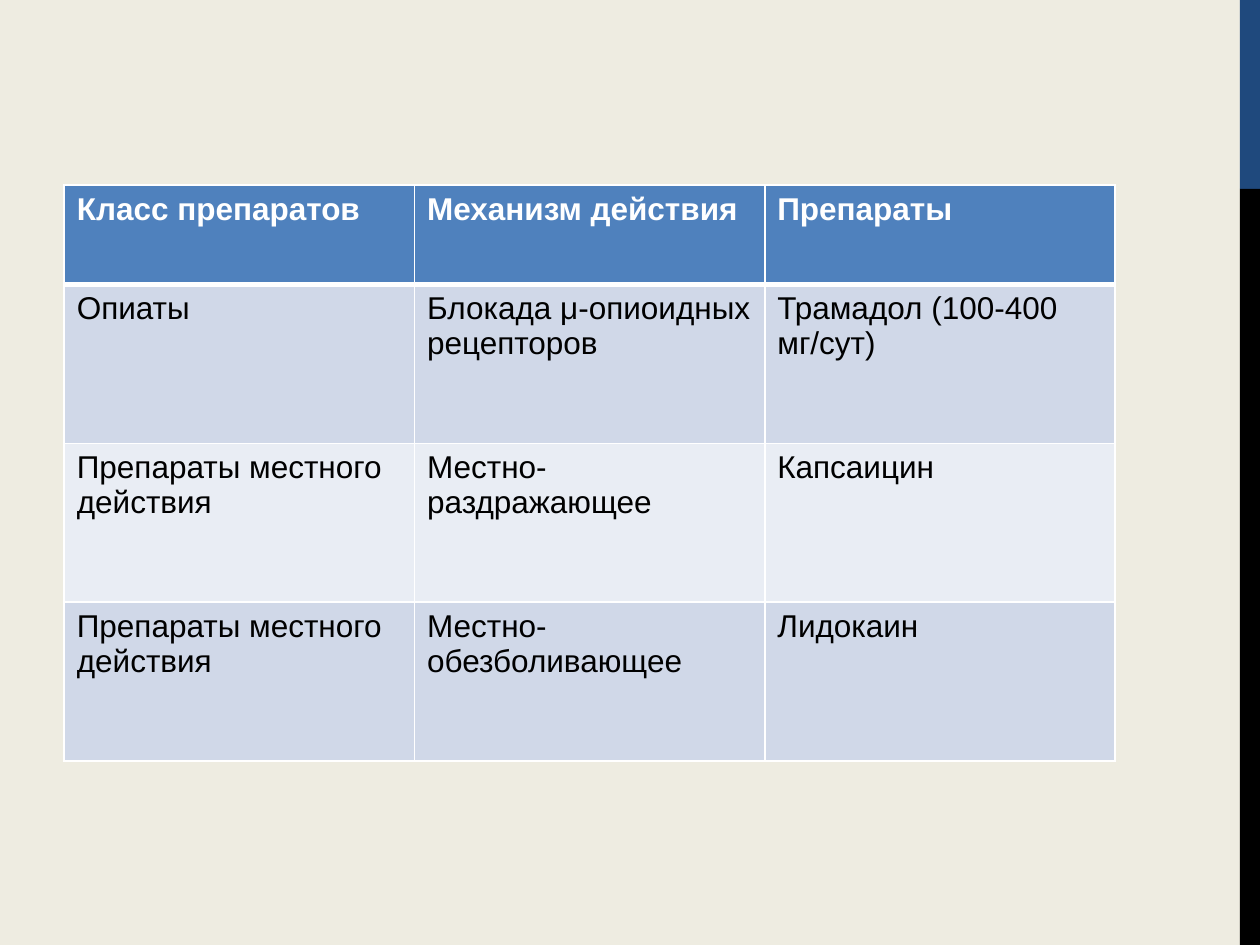
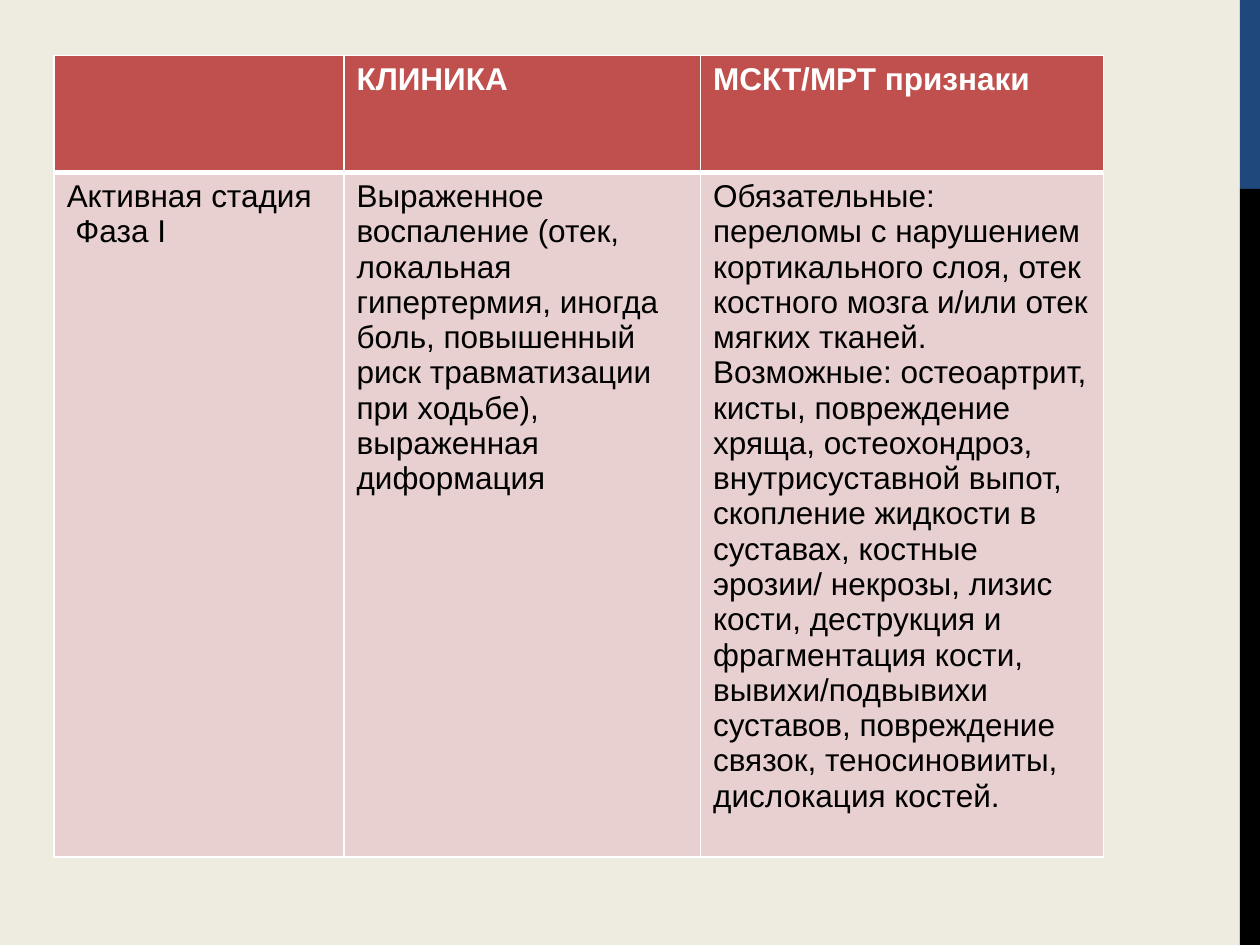
from lxml import etree
from pptx import Presentation
from pptx.dml.color import RGBColor
from pptx.enum.shapes import MSO_SHAPE
from pptx.oxml.ns import qn
from pptx.util import Inches, Pt

RECTANGLE = MSO_SHAPE.RECTANGLE
COLORS = {
    "background": "EEECE1", "navy": "1F497D", "black": "000000", "white": "FFFFFF",
    "blue": "4F81BD", "blue_tint": "D0D8E8", "blue_pale": "E9EDF4",
    "red": "C0504D", "red_tint": "E8D0D0",
}
FONT = "Arial"
WIDTH, HEIGHT = 10, 7.5
BAND_WIDTH = 0.16
BAND_SPLIT = HEIGHT / 5

# Each row is a fill name, a height and its cell texts; "\n" starts a paragraph.
TABLES = [
    {
        "left": 0.51, "top": 1.47, "columns": [2.78] * 3,
        "rows": [
            ("blue", 0.79, ["Класс препаратов", "Механизм действия", "Препараты"]),
            ("blue_tint", 1.26, ["Опиаты", "Блокада μ-опиоидных рецепторов",
                                 "Трамадол (100-400 мг/сут)"]),
            ("blue_pale", 1.26, ["Препараты местного\nдействия", "Местно-раздражающее",
                                 "Капсаицин"]),
            ("blue_tint", 1.26, ["Препараты местного действия", "Местно-обезболивающее",
                                 "Лидокаин"]),
        ],
    },
    {
        "left": 0.43, "top": 0.44, "columns": [2.3, 2.83, 3.2],
        "rows": [
            ("red", 0.93, ["", "КЛИНИКА", "МСКТ/МРТ признаки"]),
            ("red_tint", 5.43, [
                "Активная стадия\n Фаза I",
                "Выраженное воспаление (отек, локальная гипертермия, иногда боль, "
                "повышенный риск травматизации при ходьбе), выраженная диформация",
                "Обязательные: переломы с нарушением кортикального слоя, отек костного "
                "мозга и/или отек мягких тканей. Возможные: остеоартрит, кисты, "
                "повреждение хряща, остеохондроз, внутрисуставной выпот, скопление "
                "жидкости в суставах, костные эрозии/ некрозы, лизис кости, деструкция "
                "и фрагментация кости, вывихи/подвывихи суставов, повреждение связок, "
                "теносиновииты, дислокация костей.",
            ]),
        ],
    },
]


def paint(fill, color):
    fill.solid()
    fill.fore_color.rgb = RGBColor.from_string(COLORS[color])


def add_borders(cell, bottom, top):
    """Draw white cell borders, 1 pt at the sides; they must precede the fill in tcPr."""
    properties = cell._tc.get_or_add_tcPr()
    for index, (side, points) in enumerate((("L", 1), ("R", 1), ("T", top), ("B", bottom))):
        line = etree.Element(qn(f"a:ln{side}"), w=str(Pt(points)))
        solid = etree.SubElement(line, qn("a:solidFill"))
        etree.SubElement(solid, qn("a:srgbClr"), val=COLORS["white"])
        properties.insert(index, line)


presentation = Presentation()
presentation.slide_width = Inches(WIDTH)
presentation.slide_height = Inches(HEIGHT)
paint(presentation.slide_master.background.fill, "background")
blank_layout = presentation.slide_layouts[6]

for content in TABLES:
    slide = presentation.slides.add_slide(blank_layout)

    for color, top, height in (("navy", 0, BAND_SPLIT),
                               ("black", BAND_SPLIT, HEIGHT - BAND_SPLIT)):
        band = slide.shapes.add_shape(RECTANGLE, Inches(WIDTH - BAND_WIDTH), Inches(top),
                                      Inches(BAND_WIDTH), Inches(height))
        band.shadow.inherit = False
        band.line.fill.background()
        paint(band.fill, color)

    columns, rows = content["columns"], content["rows"]
    table = slide.shapes.add_table(
        len(rows), len(columns), Inches(content["left"]), Inches(content["top"]),
        Inches(sum(columns)), Inches(sum(height for _, height, _ in rows))).table
    table.horz_banding = False
    for column, width in zip(table.columns, columns):
        column.width = Inches(width)

    for row_index, (fill, height, texts) in enumerate(rows):
        is_header = row_index == 0
        table.rows[row_index].height = Inches(height)
        for cell, text in zip(table.rows[row_index].cells, texts):
            cell.text = text
            paint(cell.fill, fill)
            add_borders(cell, bottom=3 if is_header else 1, top=3 if row_index == 1 else 1)
            for paragraph in cell.text_frame.paragraphs:
                font = paragraph.font
                font.name, font.size, font.bold = FONT, Pt(18), is_header
                font.color.rgb = RGBColor.from_string(
                    COLORS["white" if is_header else "black"])

presentation.save("out.pptx")
